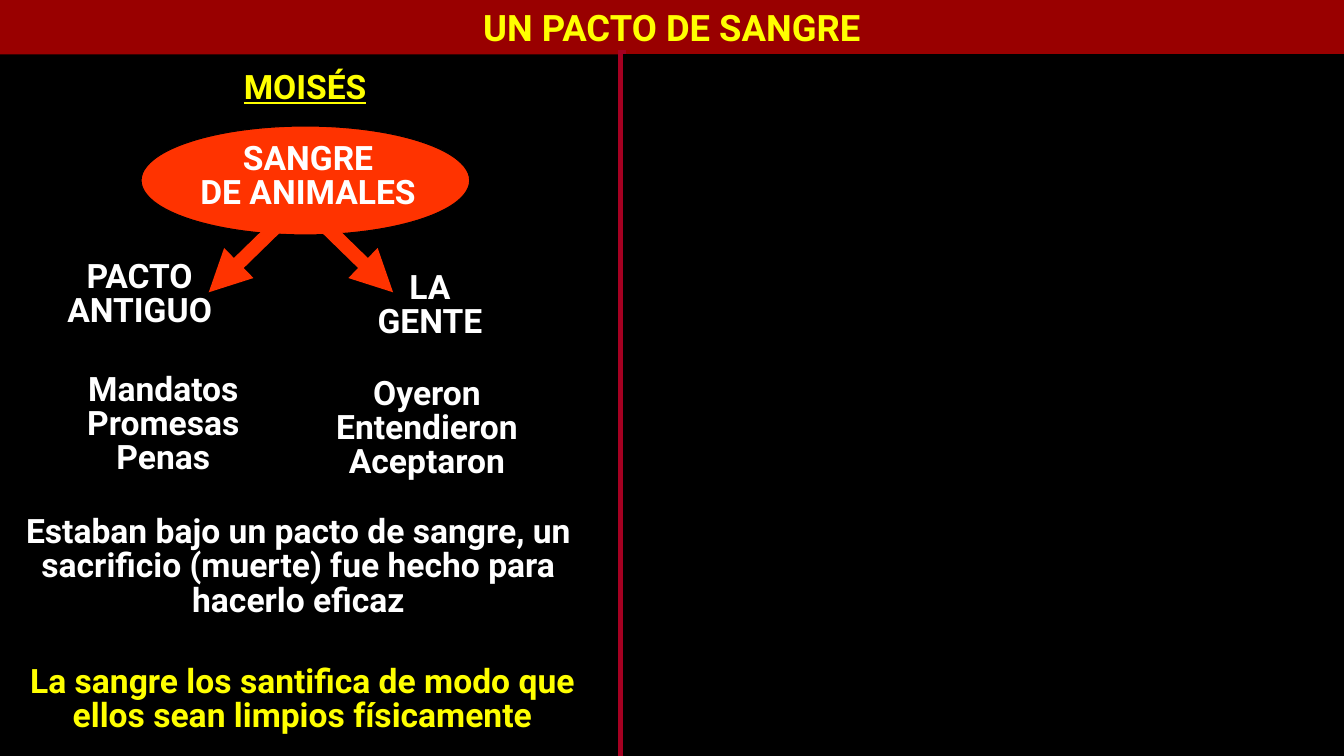
from dataclasses import dataclass

from lxml import etree
from pptx import Presentation
from pptx.dml.color import RGBColor
from pptx.enum.shapes import MSO_CONNECTOR, MSO_SHAPE
from pptx.enum.text import MSO_ANCHOR, MSO_AUTO_SIZE, PP_ALIGN
from pptx.oxml.ns import qn
from pptx.slide import Slide
from pptx.text.text import TextFrame
from pptx.util import Inches, Pt

CENTER, LEFT = PP_ALIGN.CENTER, PP_ALIGN.LEFT
STRAIGHT = MSO_CONNECTOR.STRAIGHT
OVAL, RECTANGLE = MSO_SHAPE.OVAL, MSO_SHAPE.RECTANGLE
SLIDE_WIDTH, SLIDE_HEIGHT = Inches(13.333), Inches(7.5)
FONT = "Roboto"
COLORS = {
    "black": "000000",
    "white": "FFFFFF",
    "yellow": "FFFF00",
    "banner": "990000",
    "blood": "FF3300",
    "divider": "A50021",
}


@dataclass(frozen=True)
class Box:
    """Left, top, width and height as percentages of the slide."""
    left: float
    top: float
    width: float
    height: float

    def lengths(self) -> tuple[int, int, int, int]:
        return (across(self.left), down(self.top),
                across(self.width), down(self.height))


@dataclass(frozen=True)
class Label:
    box: Box
    lines: tuple[str, ...]
    color: str = "white"
    alignment: PP_ALIGN = CENTER
    underline: bool = False


@dataclass(frozen=True)
class Line:
    """Start and end points as percentages of the slide."""
    start: tuple[float, float]
    end: tuple[float, float]
    color: str
    points: float
    arrow: bool = False


@dataclass(frozen=True)
class Block:
    kind: MSO_SHAPE
    box: Box
    color: str


BANNER = Box(0, 0, 100, 7.2)
OVAL_BLOCK = Block(OVAL, Box(10.5, 16.67, 24.45, 14.4), "blood")
RIGHT_PANEL = Block(RECTANGLE, Box(46.43, 7.2, 53.57, 92.8), "black")
LINES = (
    Line((46.28, 6.67), (46.28, 100), "divider", 6),
    Line((21.15, 28.93), (15.53, 38.67), "blood", 10, arrow=True),
    Line((23.63, 28.93), (29.25, 38.67), "blood", 10, arrow=True),
)
LABELS = (
    Label(Box(17.4, 8.93, 11.85, 5.87), ("MOISÉS",), "yellow", LEFT, True),
    Label(Box(11.93, 18.27, 21.98, 10.53), ("SANGRE", "DE ANIMALES")),
    Label(Box(2.25, 33.87, 16.28, 10.53), ("PACTO", "ANTIGUO")),
    Label(Box(25.13, 35.33, 13.73, 10.53), ("LA", "GENTE")),
    Label(Box(4.35, 48.8, 15.6, 15.07), ("Mandatos", "Promesas", "Penas")),
    Label(Box(22.65, 49.33, 18.23, 15.07),
          ("Oyeron", "Entendieron", "Aceptaron")),
    Label(Box(-0.3, 67.6, 45, 15.07),
          ("Estaban bajo un pacto de sangre, un sacrificio (muerte) "
           "fue hecho para hacerlo eficaz",)),
    Label(Box(-0.3, 87.47, 45.6, 10.53),
          ("La sangre los santifica de modo que ellos sean limpios "
           "físicamente",), "yellow"),
)


def across(share: float) -> int:
    return round(SLIDE_WIDTH * share / 100)


def down(share: float) -> int:
    return round(SLIDE_HEIGHT * share / 100)


def rgb(name: str) -> RGBColor:
    return RGBColor.from_string(COLORS[name])


def write_lines(frame: TextFrame, lines: tuple[str, ...], size: float,
                color: str, spacing: float, alignment: PP_ALIGN = CENTER,
                underline: bool = False) -> None:
    frame.word_wrap = True
    for index, text in enumerate(lines):
        paragraph = frame.add_paragraph() if index else frame.paragraphs[0]
        paragraph.alignment = alignment
        paragraph.line_spacing = spacing
        run = paragraph.add_run()
        run.text = text
        run.font.name = FONT
        run.font.size = Pt(size)
        run.font.bold = True
        run.font.underline = underline
        run.font.color.rgb = rgb(color)


def add_banner_title(slide: Slide, text: str) -> None:
    title = slide.shapes.title
    title.left, title.top, title.width, title.height = BANNER.lengths()
    title.fill.solid()
    title.fill.fore_color.rgb = rgb("banner")
    title.text_frame.auto_size = MSO_AUTO_SIZE.NONE
    title.text_frame.vertical_anchor = MSO_ANCHOR.MIDDLE
    write_lines(title.text_frame, (text,), 26, "yellow", 1.0)


def add_block(slide: Slide, block: Block) -> None:
    shape = slide.shapes.add_shape(block.kind, *block.box.lengths())
    shape.shadow.inherit = False
    shape.fill.solid()
    shape.fill.fore_color.rgb = rgb(block.color)
    shape.line.color.rgb = rgb("black")
    shape.line.width = Pt(0.75)


def add_label(slide: Slide, label: Label) -> None:
    text_box = slide.shapes.add_textbox(*label.box.lengths())
    text_box.text_frame.auto_size = MSO_AUTO_SIZE.SHAPE_TO_FIT_TEXT
    write_lines(text_box.text_frame, label.lines, 24, label.color, 0.85,
                label.alignment, label.underline)


def add_line(slide: Slide, line: Line) -> None:
    connector = slide.shapes.add_connector(
        STRAIGHT, across(line.start[0]), down(line.start[1]),
        across(line.end[0]), down(line.end[1]))
    connector.line.color.rgb = rgb(line.color)
    connector.line.width = Pt(line.points)
    if line.arrow:
        outline = connector.line._get_or_add_ln()
        etree.SubElement(outline, qn("a:tailEnd"), type="triangle")
    etree.SubElement(connector._element.spPr, qn("a:effectLst"))


def main() -> None:
    presentation = Presentation()
    presentation.slide_width = SLIDE_WIDTH
    presentation.slide_height = SLIDE_HEIGHT
    title_only = presentation.slide_layouts.get_by_name("Title Only")
    slide = presentation.slides.add_slide(title_only)
    slide.background.fill.solid()
    slide.background.fill.fore_color.rgb = rgb("black")

    add_banner_title(slide, "UN PACTO DE SANGRE")
    add_block(slide, OVAL_BLOCK)
    for line in LINES:
        add_line(slide, line)
    add_block(slide, RIGHT_PANEL)
    for label in LABELS:
        add_label(slide, label)
    presentation.save("out.pptx")


if __name__ == "__main__":
    main()
